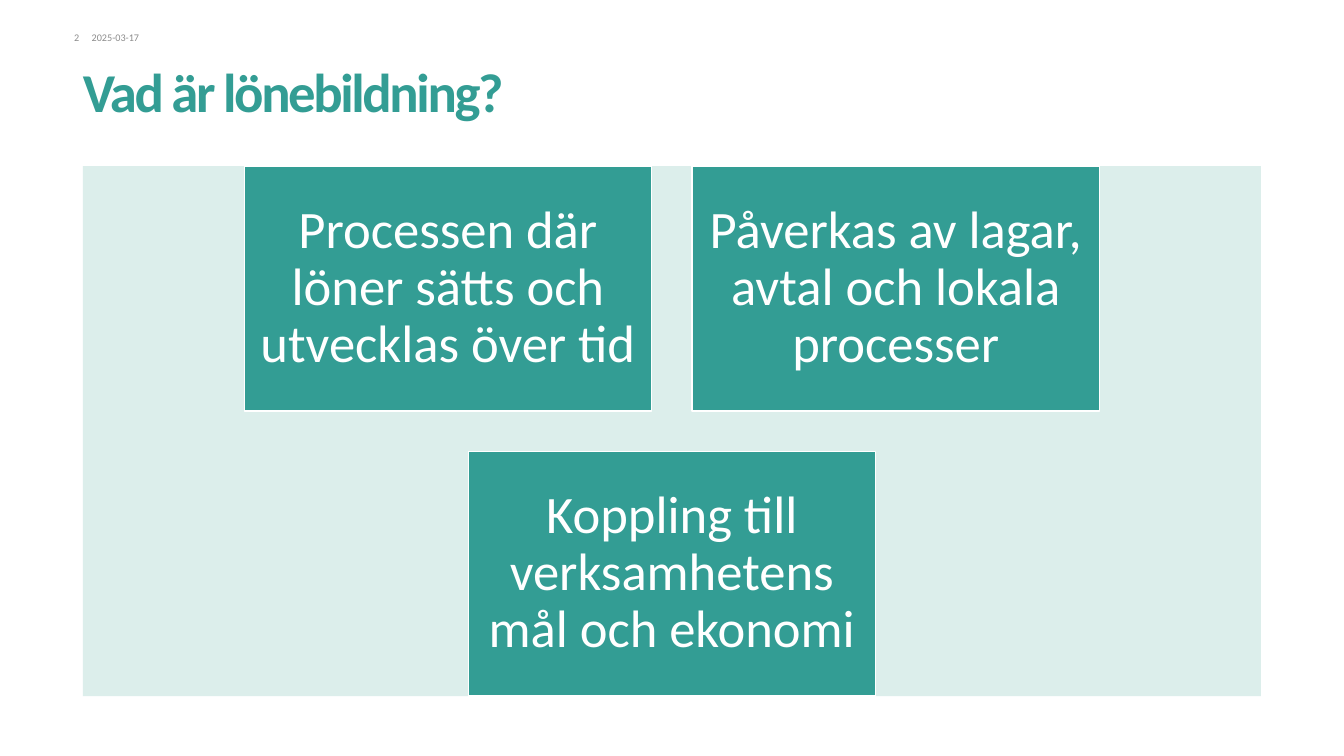
from pptx import Presentation
from pptx.dml.color import RGBColor
from pptx.enum.shapes import MSO_SHAPE
from pptx.enum.text import MSO_ANCHOR, PP_ALIGN
from pptx.util import Cm, Pt

TEAL = RGBColor(0x33, 0x9D, 0x94)
PALE_TEAL = RGBColor(0xDC, 0xEE, 0xEB)
GREY = RGBColor(0x8C, 0x8C, 0x8C)
WHITE = RGBColor(0xFF, 0xFF, 0xFF)
FONT = "Calibri"

MARGIN, CONTENT_W = 3.45, 48.95
PANEL_TOP, PANEL_H = 6.91, 22.02
BOX_W, BOX_H, GAP = 16.92, 10.16, 1.69
BOX_ROWS = [
    ["Processen där löner sätts och utvecklas över tid",
     "Påverkas av lagar, avtal och lokala processer"],
    ["Koppling till verksamhetens mål och ekonomi"],
]


def set_text(sp, text, size, color, bold=False, align=PP_ALIGN.LEFT,
             anchor=MSO_ANCHOR.TOP, line_spacing=1.0, tracking=0, inset=0, bottom=None):
    """Fill a shape with one paragraph; tracking is in points, insets in cm."""
    tf = sp.text_frame
    tf.word_wrap = True
    tf.vertical_anchor = anchor
    tf.margin_left = tf.margin_right = tf.margin_top = Cm(inset)
    tf.margin_bottom = Cm(inset if bottom is None else bottom)
    p = tf.paragraphs[0]
    p.alignment = align
    p.line_spacing = line_spacing
    r = p.add_run()
    r.text = text
    r.font.name = FONT
    r.font.size = Pt(size)
    r.font.bold = bold
    r.font.color.rgb = color
    if tracking:
        r.font._element.set("spc", str(round(tracking * 100)))


def add_text(s, x, y, w, h, text, size, color, **text_format):
    sp = s.shapes.add_textbox(Cm(x), Cm(y), Cm(w), Cm(h))
    set_text(sp, text, size, color, **text_format)


def add_rect(s, x, y, w, h, fill, line=None):
    sp = s.shapes.add_shape(MSO_SHAPE.RECTANGLE, Cm(x), Cm(y), Cm(w), Cm(h))
    sp.shadow.inherit = False
    sp.fill.solid()
    sp.fill.fore_color.rgb = fill
    if line is None:
        sp.line.fill.background()
    else:
        sp.line.color.rgb = line
        sp.line.width = Pt(2)
    return sp


def add_box_rows(s):
    """Centre each row of boxes across the panel."""
    for i, row in enumerate(BOX_ROWS):
        row_w = len(row) * (BOX_W + GAP) - GAP
        left = MARGIN + (CONTENT_W - row_w) / 2
        top = PANEL_TOP + i * (BOX_H + GAP)
        for j, text in enumerate(row):
            sp = add_rect(s, left + j * (BOX_W + GAP), top, BOX_W, BOX_H, TEAL, line=WHITE)
            set_text(sp, text, 62, WHITE, align=PP_ALIGN.CENTER,
                     anchor=MSO_ANCHOR.MIDDLE, line_spacing=0.9, inset=0.6)


def main():
    prs = Presentation()
    prs.slide_width, prs.slide_height = Cm(55.85), Cm(31.42)
    s = prs.slides.add_slide(prs.slide_layouts[6])
    add_rect(s, MARGIN, PANEL_TOP, CONTENT_W, PANEL_H, PALE_TEAL)
    add_text(s, MARGIN, 2.44, CONTENT_W, 2.9, "Vad är lönebildning?", 64.5, TEAL, bold=True,
             anchor=MSO_ANCHOR.BOTTOM, line_spacing=0.85, tracking=-2.8, bottom=0.2)
    add_text(s, 3.81, 1.32, 2.6, 0.51, "2025-03-17", 12, GREY)
    add_text(s, 2.31, 1.32, 0.99, 0.51, "2", 12, GREY, align=PP_ALIGN.RIGHT)
    add_box_rows(s)
    prs.save("out.pptx")


if __name__ == "__main__":
    main()
